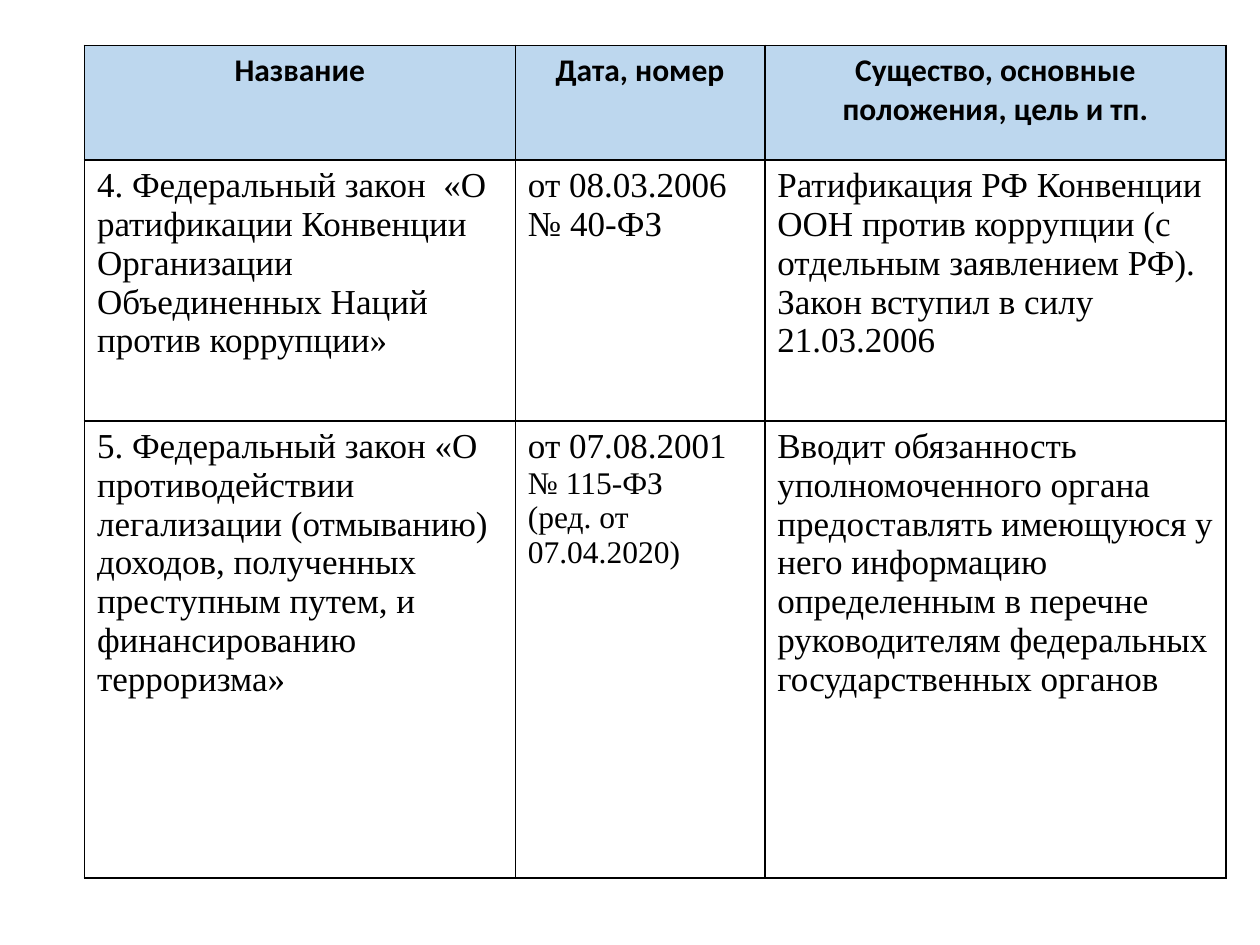
from dataclasses import dataclass

from lxml import etree
from pptx import Presentation
from pptx.dml.color import RGBColor
from pptx.enum.text import MSO_ANCHOR, PP_ALIGN as Align
from pptx.oxml.ns import qn
from pptx.table import _Cell as Cell
from pptx.util import Inches, Pt

BLACK = RGBColor(0x00, 0x00, 0x00)
HEADER_BLUE = RGBColor(0xBD, 0xD7, 0xEE)

COLUMN_WIDTHS = (3.42, 1.98, 3.66)
HEADERS = ("Название", "Дата, номер", "Существо, основные положения, цель и тп.")


@dataclass(frozen=True)
class Law:
    title: str
    date: str
    details: tuple[str, ...]
    details_size: int
    substance: str
    row_height: float


LAWS = (
    Law(
        "4. Федеральный закон  «О ратификации Конвенции Организации "
        "Объединенных Наций против коррупции»",
        "от 08.03.2006", ("№ 40-ФЗ",), 20,
        "Ратификация РФ Конвенции ООН против коррупции (с отдельным "
        "заявлением РФ). Закон вступил в силу 21.03.2006",
        2.07,
    ),
    Law(
        "5. Федеральный закон «О противодействии легализации (отмыванию) "
        "доходов, полученных преступным путем, и финансированию терроризма»",
        "от 07.08.2001", ("№ 115-ФЗ", "(ред. от 07.04.2020)"), 18,
        "Вводит обязанность уполномоченного органа предоставлять имеющуюся "
        "у него информацию определенным в перечне руководителям федеральных "
        "государственных органов",
        3.63,
    ),
)
HEADER_HEIGHT = 0.91


def add_text(cell: Cell, text: str, *, size: int = 20, font: str = "Times New Roman",
             bold: bool = False, align: Align = Align.LEFT) -> None:
    """Fill the empty first paragraph of the cell, or append a new one."""
    frame = cell.text_frame
    paragraph = frame.add_paragraph() if frame.text else frame.paragraphs[0]
    paragraph.alignment = align
    run = paragraph.add_run()
    run.text = text
    run.font.name = font
    run.font.size = Pt(size)
    run.font.bold = bold
    run.font.color.rgb = BLACK


def format_cell(cell: Cell, *, side_margin: float = 0.1,
                fill: RGBColor | None = None) -> None:
    """Set margins, borders and fill; borders must precede the fill in the XML."""
    cell.vertical_anchor = MSO_ANCHOR.TOP
    cell.margin_left = cell.margin_right = Inches(side_margin)
    cell.margin_top = cell.margin_bottom = Inches(0.05)
    properties = cell._tc.get_or_add_tcPr()
    for side in ("a:lnL", "a:lnR", "a:lnT", "a:lnB"):
        border = etree.SubElement(properties, qn(side), w=str(Pt(1)))
        solid = etree.SubElement(border, qn("a:solidFill"))
        etree.SubElement(solid, qn("a:srgbClr"), val=str(BLACK))
    if fill is None:
        cell.fill.background()
    else:
        cell.fill.solid()
        cell.fill.fore_color.rgb = fill


def main() -> None:
    presentation = Presentation()
    presentation.slide_width = Inches(10)
    presentation.slide_height = Inches(7.5)
    slide = presentation.slides.add_slide(presentation.slide_layouts[6])

    # Table grid
    row_heights = (HEADER_HEIGHT, *(law.row_height for law in LAWS))
    table = slide.shapes.add_table(
        len(row_heights), len(COLUMN_WIDTHS), Inches(0.67), Inches(0.36),
        Inches(sum(COLUMN_WIDTHS)), Inches(sum(row_heights)),
    ).table
    table.horz_banding = False
    for column, width in zip(table.columns, COLUMN_WIDTHS):
        column.width = Inches(width)
    for row, height in zip(table.rows, row_heights):
        row.height = Inches(height)

    # Header row
    for cell, header in zip(table.rows[0].cells, HEADERS):
        format_cell(cell, side_margin=0.08, fill=HEADER_BLUE)
        add_text(cell, header, size=18, font="Calibri", bold=True, align=Align.CENTER)

    # One row per law
    for row_number, law in enumerate(LAWS, start=1):
        title, date, substance = table.rows[row_number].cells
        for cell in (title, date, substance):
            format_cell(cell)
        add_text(title, law.title)
        add_text(date, law.date)
        for detail in law.details:
            add_text(date, detail, size=law.details_size)
        add_text(substance, law.substance)

    presentation.save("out.pptx")


if __name__ == "__main__":
    main()
